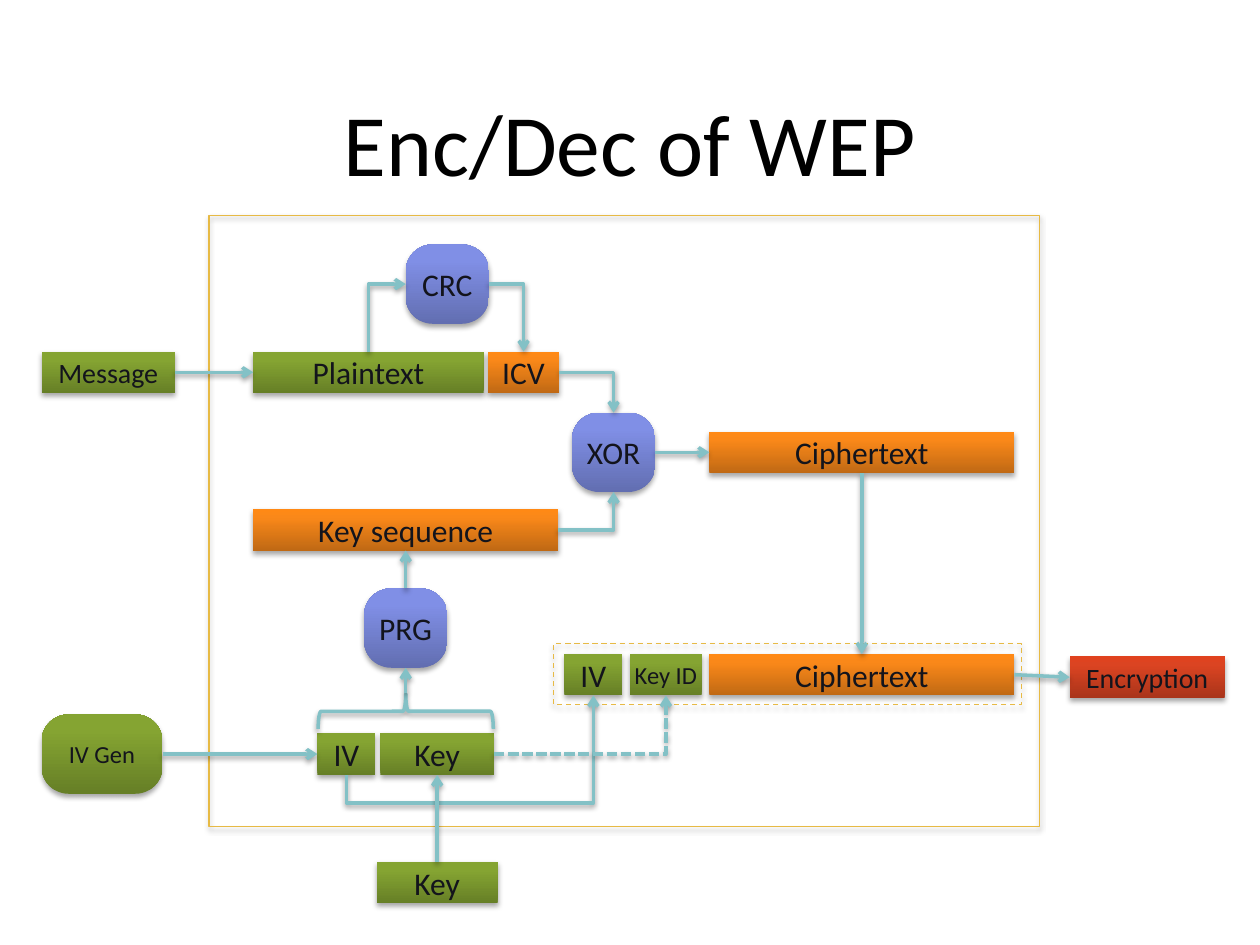
from copy import deepcopy
from pptx import Presentation
from pptx.dml.color import RGBColor
from pptx.enum.dml import MSO_LINE
from pptx.enum.shapes import MSO_CONNECTOR, MSO_SHAPE
from pptx.enum.text import MSO_ANCHOR, PP_ALIGN
from pptx.oxml.ns import qn
from pptx.util import Inches, Pt
from lxml import etree

RECT, ROUND, BRACE = MSO_SHAPE.RECTANGLE, MSO_SHAPE.ROUNDED_RECTANGLE, MSO_SHAPE.LEFT_BRACE
STRAIGHT, ELBOW = MSO_CONNECTOR.STRAIGHT, MSO_CONNECTOR.ELBOW
DASH, SYS_DASH = MSO_LINE.DASH, MSO_LINE.SQUARE_DOT
TOP, LEFT, BOTTOM, RIGHT = range(4)
hex_color = RGBColor.from_string

GREEN = ("667F26", "85A432", "87A730")
ORANGE = ("C06914", "FA8819", "FF8915")
BLUE = ("626EB1", "808FE6", "7E8EE9")
RED = ("A9341A", "DB4422", "E0421E")
TEAL, GOLD, INK = "83C1C6", "E7BA45", "13141C"

prs = Presentation()
prs.slide_width, prs.slide_height = Inches(10), Inches(7.5)
U = prs.slide_width / 100
s = prs.slides.add_slide(prs.slide_layouts[6])


def outline(sp, color, width, dash=None):
    sp.line.color.rgb = hex_color(color)
    sp.line.width = Pt(width)
    if dash:
        sp.line.dash_style = dash


def add_shadow(sp, blur, dist, alpha):
    pr = sp._element.spPr
    effects = pr.find(qn("a:effectLst"))
    if effects is None:
        effects = etree.SubElement(pr, qn("a:effectLst"))
    shadow = etree.SubElement(effects, qn("a:outerShdw"), blurRad=str(Pt(blur)),
                              dist=str(Pt(dist)), dir="5400000", rotWithShape="0")
    black = etree.SubElement(shadow, qn("a:srgbClr"), val="000000")
    etree.SubElement(black, qn("a:alpha"), val=str(alpha * 1000))


title = s.shapes.add_textbox(*[int(v * U) for v in (5, 5, 90, 12.5)])
tf = title.text_frame
tf.word_wrap = True
tf.vertical_anchor = MSO_ANCHOR.MIDDLE
p = tf.paragraphs[0]
p.alignment = PP_ALIGN.CENTER
r = p.add_run()
r.text = "Enc/Dec of WEP"
r.font.size, r.font.name = Pt(50), "Calibri"
r.font.color.rgb = hex_color("000000")

BAR, KNOB, WIDE = 3.3, 6.3, 24.2
boxes = [
    ("plaintext", "Plaintext", RECT, 20.1, 27.9, 18.3, BAR, GREEN, 18),
    ("crc", "CRC", ROUND, 32.2, 19.4, 6.6, KNOB, BLUE, 18),
    ("icv", "ICV", RECT, 38.7, 27.9, 5.7, BAR, ORANGE, 18),
    ("iv out", "IV", RECT, 44.8, 51.9, 4.6, BAR, GREEN, 18),
    ("key id", "Key ID", RECT, 50, 51.9, 5.7, BAR, GREEN, 14),
    ("iv gen", "IV Gen", ROUND, 3.3, 56.7, 9.6, KNOB, GREEN, 14),
    ("iv", "IV", RECT, 25.2, 58.2, 4.6, BAR, GREEN, 18),
    ("xor", "XOR", ROUND, 45.4, 32.75, 6.6, KNOB, BLUE, 18),
    ("cipher", "Ciphertext", RECT, 56.3, 34.25, WIDE, BAR, ORANGE, 18),
    ("cipher out", "Ciphertext", RECT, 56.3, 51.9, WIDE, BAR, ORANGE, 18),
    ("prg", "PRG", ROUND, 28.9, 46.7, 6.6, KNOB, BLUE, 18),
    ("key seq", "Key sequence", RECT, 20.1, 40.4, WIDE, BAR, ORANGE, 18),
    ("message", "Message", RECT, 3.3, 27.9, 10.6, BAR, GREEN, 16),
    ("encryption", "Encryption", RECT, 84.9, 52.1, 12.3, BAR, RED, 16),
    ("key", "Key", RECT, 30.2, 58.2, 9, BAR, GREEN, 18),
    ("key in", "Key", RECT, 29.9, 68.4, 9.6, BAR, GREEN, 18),
]
shapes = {}
sites = {"brace": [(32.2, 55)]}
for name, text, kind, x, y, w, h, colors, size in boxes:
    sp = s.shapes.add_shape(kind, *[int(v * U) for v in (x, y, w, h)])
    if kind == ROUND:
        sp.adjustments[0] = 0.34
    sp.fill.gradient()
    sp.fill.gradient_angle = 90
    stops = sp._element.spPr.find(".//" + qn("a:gsLst"))
    stops.append(deepcopy(stops[-1]))
    for stop, position, color in zip(sp.fill.gradient_stops, (0, 0.8, 1), colors):
        stop.position = position
        stop.color.rgb = hex_color(color)
    sp.line.fill.background()
    sp.shadow.inherit = False
    add_shadow(sp, 3.1, 1.8, 35)
    tf = sp.text_frame
    tf.margin_left = tf.margin_right = tf.margin_top = tf.margin_bottom = 0
    tf.word_wrap = True
    tf.vertical_anchor = MSO_ANCHOR.MIDDLE
    p = tf.paragraphs[0]
    p.alignment = PP_ALIGN.CENTER
    r = p.add_run()
    r.text = text
    r.font.size, r.font.name = Pt(size), "Calibri"
    r.font.color.rgb = hex_color(INK)
    shapes[name] = sp
    sites[name] = [(x + w / 2, y), (x, y + h / 2), (x + w / 2, y + h), (x + w, y + h / 2)]

frames = [
    (BRACE, 30.8, 49.5, 2.8, 13.9, 90, TEAL, 2, None),
    (RECT, 16.6, 17.1, 65.9, 48.5, 0, GOLD, 0.75, None),
    (RECT, 43.9, 51.1, 37.2, 4.8, 0, GOLD, 0.75, DASH),
]
for kind, x, y, w, h, turn, color, width, dash in frames:
    sp = s.shapes.add_shape(kind, *[int(v * U) for v in (x, y, w, h)])
    sp.rotation = turn
    sp.fill.background()
    outline(sp, color, width, dash)
    sp.shadow.inherit = False
    add_shadow(sp, 3.1, 1.8, 35)

links = [
    ("iv gen", RIGHT, "iv", LEFT, None, None),
    ("plaintext", TOP, "crc", LEFT, "bentConnector2", None),
    ("crc", RIGHT, "icv", TOP, "bentConnector2", None),
    ("icv", RIGHT, "xor", TOP, "bentConnector2", None),
    ("key seq", RIGHT, "xor", BOTTOM, "bentConnector2", None),
    ("xor", RIGHT, "cipher", LEFT, None, None),
    ("cipher", BOTTOM, "cipher out", TOP, None, None),
    ("iv", BOTTOM, "iv out", BOTTOM, "bentConnector3", None),
    ("key", RIGHT, "key id", BOTTOM, "bentConnector2", SYS_DASH),
    ("message", RIGHT, "plaintext", LEFT, None, None),
    ("prg", TOP, "key seq", BOTTOM, None, None),
    ("brace", 0, "prg", BOTTOM, None, None),
    ("cipher out", RIGHT, "encryption", LEFT, None, None),
    ("key in", TOP, "key", BOTTOM, None, None),
]
for start, side, end, end_side, bend, dash in links:
    (x1, y1), (x2, y2) = sites[start][side], sites[end][end_side]
    upright = bend and side in (TOP, BOTTOM)
    if upright:
        cx, cy, dx, dy = (x1 + x2) / 2, (y1 + y2) / 2, (x2 - x1) / 2, (y2 - y1) / 2
        x1, y1, x2, y2 = cx - dy, cy + dx, cx + dy, cy - dx
    c = s.shapes.add_connector(ELBOW if bend else STRAIGHT, *[int(v * U) for v in (x1, y1, x2, y2)])
    pr = c._element.spPr
    if upright:
        pr.find(qn("a:xfrm")).set("rot", "5400000")
    if bend:
        geom = pr.find(qn("a:prstGeom"))
        geom.set("prst", bend)
        if bend == "bentConnector3":
            etree.SubElement(geom.find(qn("a:avLst")), qn("a:gd"), name="adj1", fmla="val -35400")
    else:
        if start in shapes:
            c.begin_connect(shapes[start], side)
        c.end_connect(shapes[end], end_side)
    outline(c, TEAL, 2, dash)
    etree.SubElement(pr.find(qn("a:ln")), qn("a:tailEnd"), type="arrow")
    add_shadow(c, 3.1, 1.6, 38)

prs.save("out.pptx")
